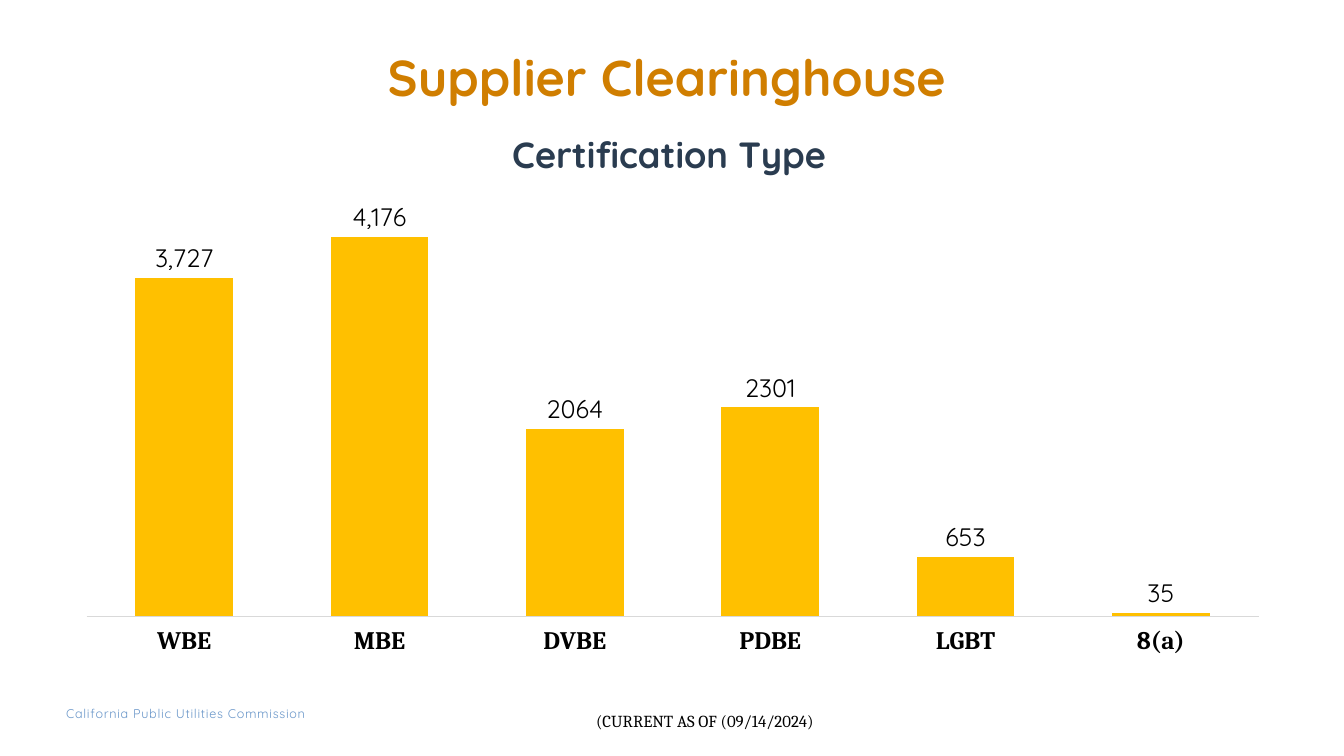
from dataclasses import dataclass

from lxml import etree
from pptx import Presentation
from pptx.chart.data import CategoryChartData
from pptx.dml.color import RGBColor
from pptx.enum.chart import XL_CHART_TYPE, XL_LABEL_POSITION, XL_TICK_LABEL_POSITION, XL_TICK_MARK
from pptx.enum.text import MSO_ANCHOR, MSO_AUTO_SIZE, PP_ALIGN
from pptx.oxml.ns import qn
from pptx.util import Emu, Pt

EMU_PER_PX = 9525
SLIDE_SIZE = (1280, 720)
TITLE_ONLY_LAYOUT = 5

LEFT, CENTER = PP_ALIGN.LEFT, PP_ALIGN.CENTER
TOP, BOTTOM = MSO_ANCHOR.TOP, MSO_ANCHOR.BOTTOM
NO_AUTOFIT = MSO_AUTO_SIZE.NONE
COLUMNS = XL_CHART_TYPE.COLUMN_CLUSTERED
OUTSIDE_END = XL_LABEL_POSITION.OUTSIDE_END
NO_TICKS = XL_TICK_MARK.NONE
LOW_LABELS = XL_TICK_LABEL_POSITION.LOW

SANS, SERIF = "Quicksand", "Cambria"
BLACK, ORANGE, NAVY, BLUE = "000000", "D07E00", "2A3C50", "6996C9"
GOLD, GRAY = "FFC000", "D9D9D9"

CHART_BOX = (64, 192, 1152, 457)
PLOT_LAYOUT = {"x": 0.016, "y": 0.003, "w": 0.969, "h": 0.861}
AXIS_MAXIMUM = 4540
CERTIFICATIONS = {
    "WBE": 3727,
    "MBE": 4176,
    "DVBE": 2064,
    "PDBE": 2301,
    "LGBT": 653,
    "8(a)": 35,
}
LABEL_FORMAT = "[>=3000]#,##0;0"


@dataclass(frozen=True)
class TextItem:
    text: str
    box: tuple[int, int, int, int]
    size: int
    color: str
    font: str = SANS
    bold: bool = False
    align: PP_ALIGN = CENTER
    anchor: MSO_ANCHOR = TOP
    insets: tuple[int, int, int, int] = (10, 5, 10, 5)
    wrap: bool = True
    line_spacing: float = 1.0
    letter_spacing: int = 0


TITLE = TextItem("Supplier Clearinghouse", (64, 38, 1152, 69), 36, ORANGE, bold=True,
                 anchor=BOTTOM, insets=(0, 5, 10, 5), line_spacing=0.9)
TEXT_BOXES = [
    TextItem("California Public Utilities Commission", (63, 672, 308, 14), 9, BLUE,
             align=LEFT, insets=(0, 0, 0, 0), letter_spacing=50),
    TextItem("Certification Type", (415, 121, 445, 52), 26, NAVY, bold=True),
    TextItem("(CURRENT AS OF (09/14/2024)", (550, 672, 243, 29), 12, BLACK,
             font=SERIF, wrap=False),
]


def px(value: int) -> Emu:
    return Emu(value * EMU_PER_PX)


def rgb(color: str) -> RGBColor:
    return RGBColor.from_string(color)


def set_attributes(target, values: dict) -> None:
    for name, value in values.items():
        setattr(target, name, value)


def format_font(font, name: str, size: int, color: str, bold: bool = False) -> None:
    set_attributes(font, {"name": name, "size": Pt(size), "bold": bold})
    font.color.rgb = rgb(color)


def write_text(shape, item: TextItem) -> None:
    left, top, width, height = map(px, item.box)
    set_attributes(shape, {"left": left, "top": top, "width": width, "height": height})
    inset_left, inset_top, inset_right, inset_bottom = map(px, item.insets)
    frame = shape.text_frame
    set_attributes(frame, {
        "word_wrap": item.wrap,
        "auto_size": NO_AUTOFIT,
        "vertical_anchor": item.anchor,
        "margin_left": inset_left,
        "margin_top": inset_top,
        "margin_right": inset_right,
        "margin_bottom": inset_bottom,
    })
    paragraph = frame.paragraphs[0]
    set_attributes(paragraph, {"alignment": item.align, "line_spacing": item.line_spacing})
    run = paragraph.add_run()
    run.text = item.text
    format_font(run.font, item.font, item.size, item.color, item.bold)
    if item.letter_spacing:
        run.font._element.set("spc", str(item.letter_spacing))


def set_plot_layout(chart) -> None:
    """Fix the inner plot area as fractions of the chart."""
    plot_area = chart._chartSpace.chart.plotArea
    for old_layout in plot_area.findall(qn("c:layout")):
        plot_area.remove(old_layout)
    layout = etree.Element(qn("c:layout"))
    manual = etree.SubElement(layout, qn("c:manualLayout"))
    settings = {"layoutTarget": "inner", "xMode": "edge", "yMode": "edge", **PLOT_LAYOUT}
    for name, value in settings.items():
        etree.SubElement(manual, qn(f"c:{name}")).set("val", str(value))
    plot_area.insert(0, layout)


def add_certification_chart(slide) -> None:
    data = CategoryChartData()
    data.categories = list(CERTIFICATIONS)
    data.add_series("Series 1", list(CERTIFICATIONS.values()))
    chart = slide.shapes.add_chart(COLUMNS, *map(px, CHART_BOX), data).chart
    set_attributes(chart, {"has_legend": False, "has_title": False})
    format_font(chart.font, SANS, 10, BLACK)
    set_plot_layout(chart)

    plot = chart.plots[0]
    set_attributes(plot, {"gap_width": 100, "overlap": -27, "vary_by_categories": False})
    series = plot.series[0]
    series.format.fill.solid()
    series.format.fill.fore_color.rgb = rgb(GOLD)
    labels = series.data_labels
    set_attributes(labels, {
        "show_value": True,
        "position": OUTSIDE_END,
        "number_format": LABEL_FORMAT,
        "number_format_is_linked": False,
    })
    format_font(labels.font, SANS, 18, BLACK)

    set_attributes(chart.value_axis, {
        "visible": False,
        "has_major_gridlines": False,
        "minimum_scale": 0,
        "maximum_scale": AXIS_MAXIMUM,
    })
    category_axis = chart.category_axis
    set_attributes(category_axis, {
        "major_tick_mark": NO_TICKS,
        "minor_tick_mark": NO_TICKS,
        "tick_label_position": LOW_LABELS,
    })
    format_font(category_axis.tick_labels.font, SERIF, 18, BLACK, bold=True)
    category_axis.format.line.color.rgb = rgb(GRAY)
    category_axis.format.line.width = Pt(0.75)


def main() -> None:
    presentation = Presentation()
    presentation.slide_width, presentation.slide_height = map(px, SLIDE_SIZE)
    slide = presentation.slides.add_slide(presentation.slide_layouts[TITLE_ONLY_LAYOUT])
    write_text(slide.shapes.title, TITLE)
    add_certification_chart(slide)
    for item in TEXT_BOXES:
        write_text(slide.shapes.add_textbox(*map(px, item.box)), item)
    presentation.save("out.pptx")


if __name__ == "__main__":
    main()
